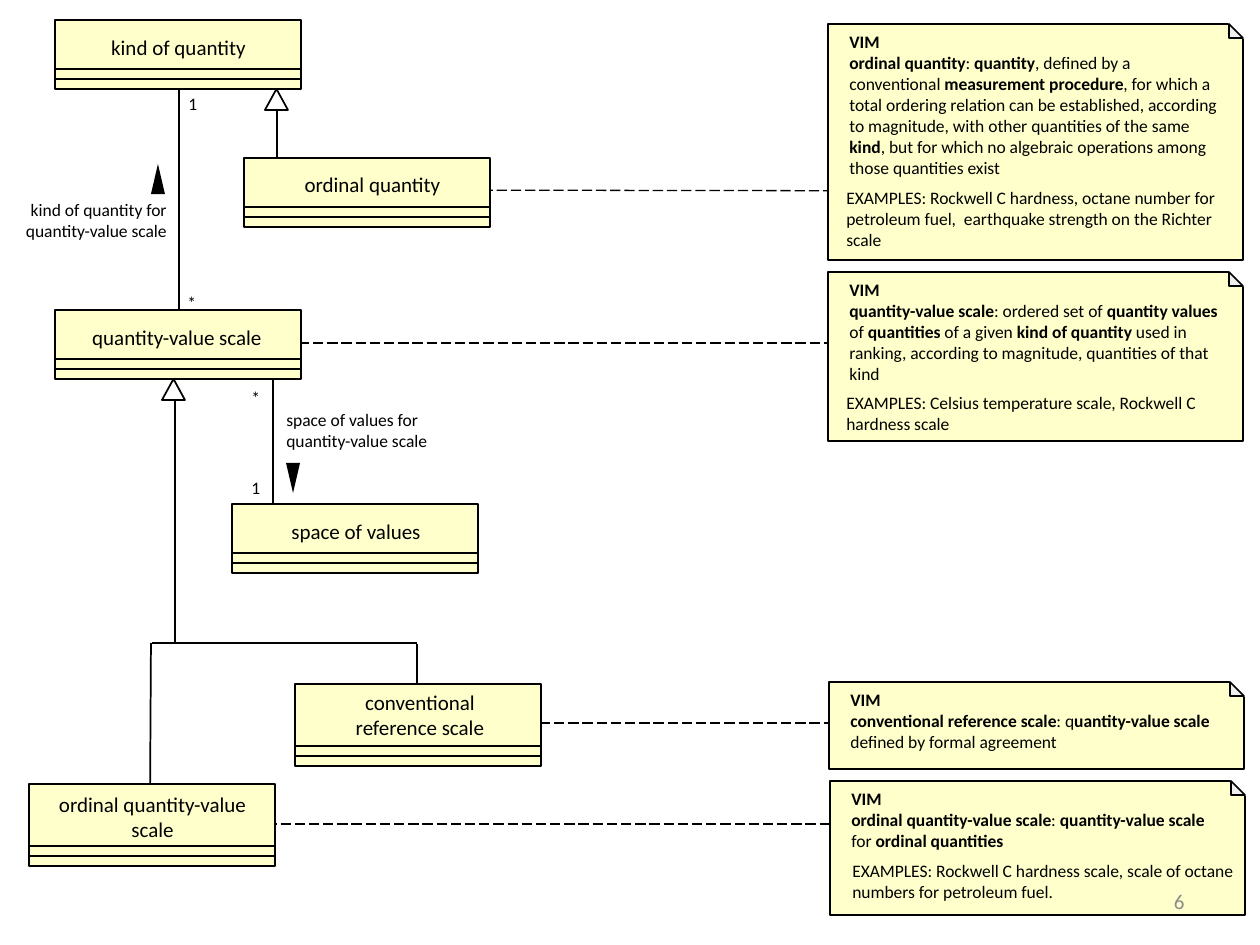
import pptx
import pptx.util
import pptx.dml.color
import pptx.enum.dml
import pptx.enum.shapes
import pptx.enum.text
import pptx.oxml.ns
import lxml.etree

PX = 914400 / 126
SHAPE = pptx.enum.shapes.MSO_SHAPE
ALIGN = pptx.enum.text.PP_ALIGN
FONT, BLACK, WHITE, YELLOW, FOLD, GREY = "Calibri", "000000", "FFFFFF", "FFFFCC", "EFEFED", "8C8C8C"
CLASS_W, NOTE_W = 246, 415

DASHED = [(238, 824, 878, 824), (369, 190, 1009, 191), (469, 723, 1110, 723), (228, 343, 868, 343)]
SOLID = [
    (273, 341, 273, 548), (179, 48, 179, 339), (277, 183, 277, 100), (175, 643, 175, 381),
    (152, 643, 417, 643), (150, 811, 151, 643), (417, 706, 417, 644),
]

CLASSES = [
    ("kind of quantity", 55, 20, 69, (98, 28, 161)),
    ("quantity-value scale", 55, 310, 69, (77, 318, 200)),
    ("ordinal quantity", 244, 158, 69, (291, 165, 163)),
    ("space of values", 232, 504, 69, (278, 512, 156)),
    ("ordinal quantity-value scale", 29, 784, 82, (43, 785, 219)),
    ("conventional reference scale", 295, 684, 82, (333, 683, 174)),
]

NOTES = [
    (828, 24, 236,
     ["ordinal quantity", ": ", "quantity", ", defined by a conventional ", "measurement procedure",
      ", for which a total ordering relation can be established, according to magnitude, "
      "with other quantities of the same ", "kind",
      ", but for which no algebraic operations among those quantities exist"],
     (834, 181, "EXAMPLES: Rockwell C hardness, octane number for petroleum fuel,  "
                "earthquake strength on the Richter scale")),
    (828, 272, 169,
     ["quantity-value scale", ": ordered set of ", "quantity values ", "of ", "quantities",
      " of a given ", "kind of quantity ",
      "used in ranking, according to magnitude, quantities of that kind"],
     (834, 386, "EXAMPLES: Celsius temperature scale, Rockwell C hardness scale")),
    (829, 682, 87,
     ["conventional reference scale", ": q", "uantity-value scale", " defined by formal agreement"],
     None),
    (830, 781, 134,
     ["ordinal quantity-value scale", ": ", "quantity-value scale ", "for ", "ordinal quantities"],
     (840, 854, "EXAMPLES: Rockwell C hardness scale, scale of octane numbers for petroleum fuel.")),
]

LABELS = [
    ("*", 175, 286, 76, 34, ALIGN.LEFT),
    ("1", 176, 87, 33, 34, ALIGN.LEFT),
    ("kind of quantity for quantity-value scale", 0, 193, 179, 55, ALIGN.RIGHT),
    ("1", 239, 471, 33, 34, ALIGN.LEFT),
    ("space of values for quantity-value scale", 274, 403, 179, 55, ALIGN.LEFT),
    ("*", 239, 381, 76, 34, ALIGN.LEFT),
]
INHERITANCE = [(265, 89), (162, 379)]
DIRECTIONS = [(151, 164, 0), (286, 463, 180)]


def rgb(color):
    """Turn a hex string into a colour."""
    return pptx.dml.color.RGBColor.from_string(color)


def emu(*lengths):
    """Turn px lengths into EMU."""
    return [pptx.util.Emu(round(n * PX)) for n in lengths]


def add_shape(s, kind, x, y, w, h, fill, outlined=True, rotation=0):
    """Add a filled preset shape."""
    sp = s.shapes.add_shape(kind, *emu(x, y, w, h))
    sp.shadow.inherit = False
    sp.fill.solid()
    sp.fill.fore_color.rgb = rgb(fill)
    sp.rotation = rotation
    if outlined:
        sp.line.color.rgb = rgb(BLACK)
        sp.line.width = pptx.util.Pt(1)
    else:
        sp.line.fill.background()
    return sp


def add_line(s, x1, y1, x2, y2, dashed=False):
    """Add a straight black connector."""
    c = s.shapes.add_connector(pptx.enum.shapes.MSO_CONNECTOR.STRAIGHT, *emu(x1, y1, x2, y2))
    c.line.color.rgb = rgb(BLACK)
    c.line.width = pptx.util.Pt(0.75 if dashed else 1)
    if dashed:
        c.line.dash_style = pptx.enum.dml.MSO_LINE.LONG_DASH
    lxml.etree.SubElement(c._element.spPr, pptx.oxml.ns.qn("a:effectLst"))


def add_text(s, x, y, w, h, paragraphs, size=10, align=ALIGN.LEFT, color=BLACK, wrap=True):
    """Add a text box from paragraphs of (text, bold) runs."""
    tf = s.shapes.add_textbox(*emu(x, y, w, h)).text_frame
    tf.word_wrap = wrap
    for i, runs in enumerate(paragraphs):
        p = tf.paragraphs[0] if i == 0 else tf.add_paragraph()
        p.alignment = align
        for text, bold in runs:
            r = p.add_run()
            r.text = text
            r.font.name = FONT
            r.font.size = pptx.util.Pt(size)
            r.font.bold = bold
            r.font.color.rgb = rgb(color)
    return tf


def add_class(s, name, x, y, h, label):
    """Add a class box with its two empty compartments."""
    add_shape(s, SHAPE.RECTANGLE, x, y, CLASS_W, h, YELLOW)
    for up in (20, 10):
        add_line(s, x, y + h - up, x + CLASS_W, y + h - up)
    tall = h > 69
    left, top, width = label
    add_text(s, left, top, width, 64 if tall else 38, [[(name, False)]], 12, ALIGN.CENTER, wrap=tall)


def add_note(s, x, y, h, definition, examples):
    """Add a note with a folded corner, a definition and examples."""
    sp = add_shape(s, SHAPE.SNIP_1_RECTANGLE, x, y, NOTE_W, h, YELLOW)
    sp.adjustments[0] = 0
    add_shape(s, SHAPE.RIGHT_TRIANGLE, x + NOTE_W - 20, y - 6, 25, 25, WHITE, False, 180)
    add_shape(s, SHAPE.RIGHT_TRIANGLE, x + NOTE_W - 14, y, 14, 14, FOLD)
    runs = [(text, i % 2 == 0) for i, text in enumerate(definition)]
    add_text(s, x + 9, y + 1, 394, 77, [[("VIM", True)], runs])
    if examples:
        left, top, text = examples
        add_text(s, left, top, 418, 55, [[(text, False)]])


def main():
    """Build the slide."""
    prs = pptx.Presentation()
    prs.slide_width, prs.slide_height = emu(1260, 945)
    s = prs.slides.add_slide(prs.slide_layouts[6])
    for ends in DASHED:
        add_line(s, *ends, dashed=True)
    for ends in SOLID:
        add_line(s, *ends)
    for item in CLASSES:
        add_class(s, *item)
    for item in NOTES:
        add_note(s, *item)
    for x, y in INHERITANCE:
        add_shape(s, SHAPE.ISOSCELES_TRIANGLE, x, y, 23, 21, WHITE)
    for x, y, rotation in DIRECTIONS:
        add_shape(s, SHAPE.ISOSCELES_TRIANGLE, x, y, 14, 30, BLACK, False, rotation)
    for text, x, y, w, h, align in LABELS:
        add_text(s, x, y, w, h, [[(text, False)]], align=align)
    tf = add_text(s, 903, 876, 294, 50, [[("6", False)]], 12, ALIGN.RIGHT, GREY)
    tf.vertical_anchor = pptx.enum.text.MSO_ANCHOR.MIDDLE
    prs.save("out.pptx")


if __name__ == "__main__":
    main()
